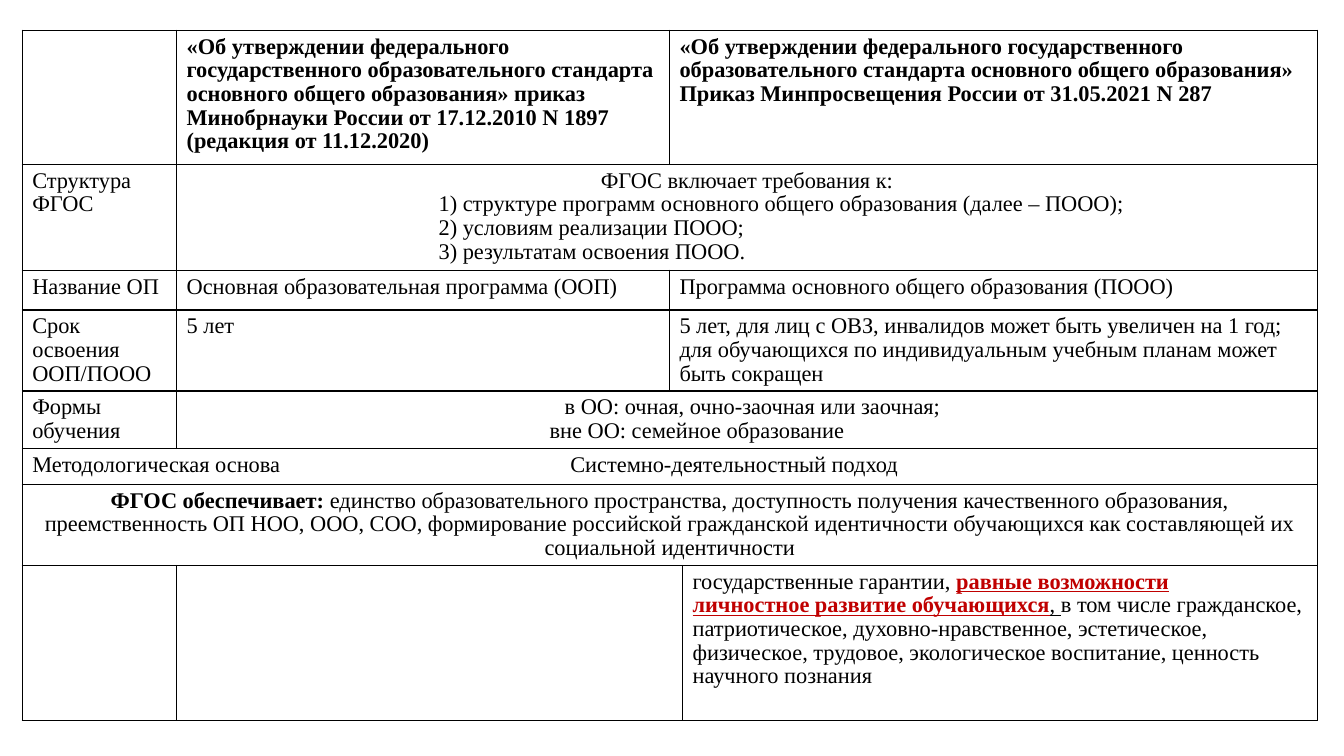
from pptx import Presentation
from pptx.dml.color import RGBColor
from pptx.enum.text import PP_ALIGN
from pptx.oxml.ns import qn
from pptx.util import Cm, Pt
from lxml import etree

LEFT, CENTER = PP_ALIGN.LEFT, PP_ALIGN.CENTER
BLANK_LAYOUT = 6

# Run formats
BOLD = {"bold": True}
UNDERLINED = {"underline": True}
ACCENT = {"bold": True, "underline": True, "color": "C00000"}


def rgb(value):
    return RGBColor.from_string(value)


def para(*runs, align=LEFT, indent=0, tab=None):
    """Paragraph of plain strings or (text, format) pairs; lengths in cm."""
    runs = [(r, {}) if isinstance(r, str) else r for r in runs]
    return {"runs": runs, "align": align, "indent": indent, "tab": tab}


class SlideBuilder:
    font, size, spacing = "Times New Roman", Pt(16), 0.95
    ink, paper, border = "000000", "FFFFFF", Pt(1)

    def __init__(self, prs):
        self.s = prs.slides.add_slide(prs.slide_layouts[BLANK_LAYOUT])

    def run(self, p, text, fmt):
        r = p.add_run()
        r.text = text
        values = {"name": self.font, "size": self.size, "bold": False,
                  "color": self.ink, **fmt}
        r.font.color.rgb = rgb(values.pop("color"))
        for name, value in values.items():
            setattr(r.font, name, value)

    def paragraph(self, p, content):
        p.alignment = content["align"]
        p.line_spacing = self.spacing
        p.font.size = self.size
        pPr = p._p.get_or_add_pPr()
        if content["indent"]:
            pPr.set("marL", str(Cm(content["indent"])))
        if content["tab"]:
            tabs = etree.Element(qn("a:tabLst"))
            etree.SubElement(tabs, qn("a:tab"), pos=str(Cm(content["tab"])), algn="l")
            pPr.find(qn("a:defRPr")).addprevious(tabs)
        for text, fmt in content["runs"]:
            self.run(p, text, fmt)

    def cell_style(self, cell):
        tcPr = cell._tc.get_or_add_tcPr()
        for side in ("a:lnL", "a:lnR", "a:lnT", "a:lnB"):
            ln = etree.SubElement(tcPr, qn(side), w=str(self.border))
            fill = etree.SubElement(ln, qn("a:solidFill"))
            etree.SubElement(fill, qn("a:srgbClr"), val=self.ink)
        cell.fill.solid()
        cell.fill.fore_color.rgb = rgb(self.paper)

    def table(self, left, top, widths, heights, rows):
        """Each row lists (column span, paragraphs) from left to right."""
        frame = self.s.shapes.add_table(
            len(heights), len(widths), Cm(left), Cm(top),
            Cm(sum(widths)), Cm(sum(heights)))
        tbl = frame.table
        tbl.first_row = tbl.horz_banding = False
        for column, width in zip(tbl.columns, widths):
            column.width = Cm(width)
        for row, height in zip(tbl.rows, heights):
            row.height = Cm(height)
        for cell in tbl.iter_cells():
            self.cell_style(cell)
        for i, row in enumerate(rows):
            j = 0
            for span, paragraphs in row:
                cell = tbl.cell(i, j)
                if span > 1:
                    cell.merge(tbl.cell(i, j + span - 1))
                tf = cell.text_frame
                for k, content in enumerate(paragraphs or [para()]):
                    p = tf.add_paragraph() if k else tf.paragraphs[0]
                    self.paragraph(p, content)
                j += span


# Table content
REQUIREMENTS = (
    "1) структуре программ основного общего образования (далее – ПООО);",
    "2) условиям реализации ПООО;",
    "3) результатам освоения ПООО.",
)
ROWS = [
    [(1, []),
     (1, [para(("«Об утверждении федерального государственного образовательного "
                "стандарта основного общего образования» приказ Минобрнауки России "
                "от 17.12.2010 N 1897 (редакция от 11.12.2020)", BOLD))]),
     (2, [para(("«Об утверждении федерального государственного образовательного "
                "стандарта основного общего образования» Приказ Минпросвещения "
                "России от 31.05.2021 N 287", BOLD))])],
    [(1, [para("Структура ФГОС")]),
     (3, [para("ФГОС включает требования к:", align=CENTER)]
      + [para(item, indent=6.35) for item in REQUIREMENTS])],
    [(1, [para("Название ОП")]),
     (1, [para("Основная образовательная программа (ООП)")]),
     (2, [para("Программа основного общего образования (ПООО)")])],
    [(1, [para("Срок освоения ООП/ПООО")]),
     (1, [para("5 лет")]),
     (2, [para("5 лет, для лиц с ОВЗ, инвалидов может быть увеличен на 1 год; "
               "для обучающихся по индивидуальным учебным планам может быть "
               "сокращен")])],
    [(1, [para("Формы обучения")]),
     (3, [para("в ОО: очная, очно-заочная или заочная;", align=CENTER, indent=0.28),
          para("вне ОО: семейное образование", indent=9.15)])],
    [(4, [para("Методологическая основа\tСистемно-деятельностный подход", tab=13.56)])],
    [(4, [para(("ФГОС обеспечивает: ", BOLD),
               "единство образовательного пространства, доступность получения "
               "качественного образования, преемственность ОП НОО, ООО, СОО, "
               "формирование российской гражданской идентичности обучающихся как "
               "составляющей их социальной идентичности", align=CENTER)])],
    [(1, []),
     (2, []),
     (1, [para("государственные гарантии, ", ("равные возможности", ACCENT)),
          para(("личностное развитие обучающихся", ACCENT), (", ", UNDERLINED),
               "в том числе гражданское, патриотическое, духовно-нравственное, "
               "эстетическое, физическое, трудовое, экологическое воспитание, "
               "ценность научного познания")])],
]


def main():
    prs = Presentation()
    prs.slide_width, prs.slide_height = Cm(33.87), Cm(19.05)

    # Comparison of the two standards
    SlideBuilder(prs).table(
        left=0.56, top=0.76,
        widths=[3.89, 12.42, 0.33, 16],
        heights=[3.38, 2.67, 1, 2.03, 1.45, 0.9, 2.04, 3.91],
        rows=ROWS)
    prs.save("out.pptx")


if __name__ == "__main__":
    main()
